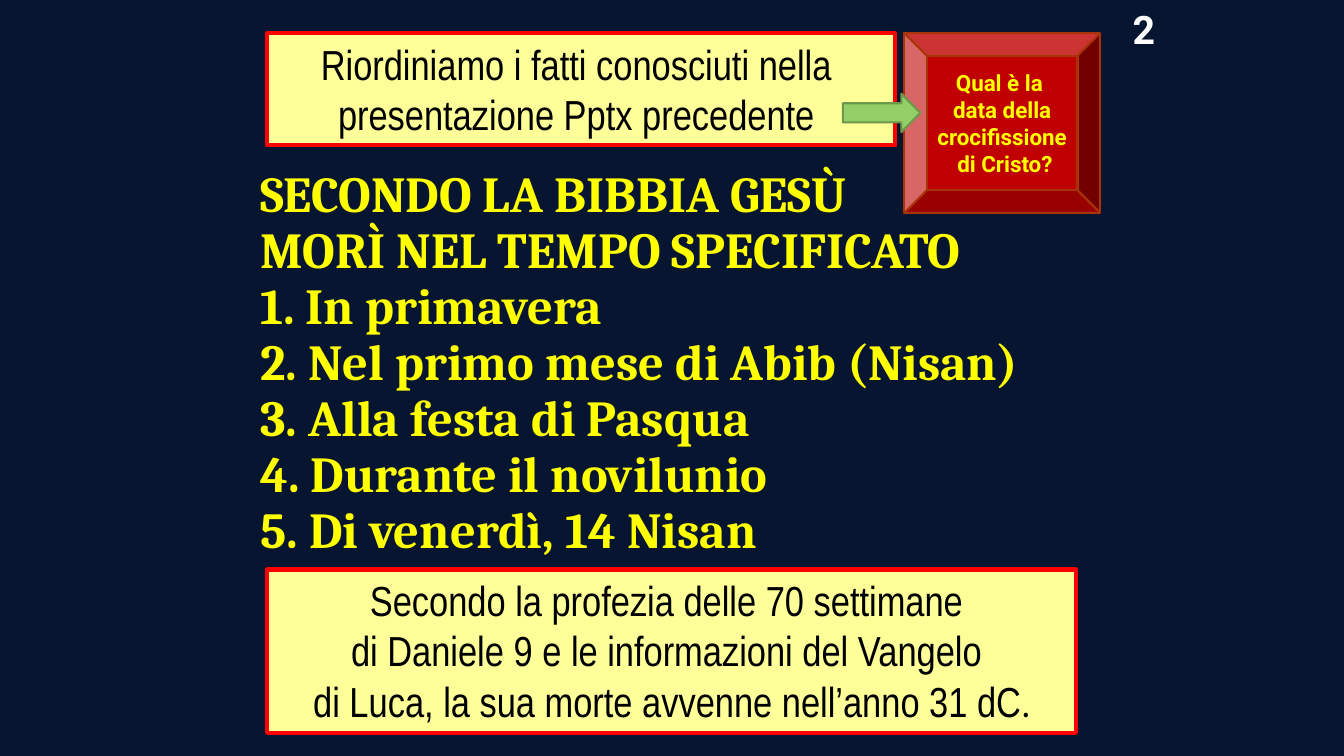
"""Build the slide that reviews the known facts about the date of the crucifixion."""
from dataclasses import dataclass

from lxml.etree import SubElement
from pptx import Presentation
from pptx.dml.color import RGBColor
from pptx.enum.shapes import MSO_SHAPE
from pptx.enum.text import MSO_ANCHOR, MSO_AUTO_SIZE, PP_ALIGN
from pptx.oxml.ns import qn
from pptx.util import Inches, Pt


@dataclass(frozen=True)
class Theme:
    night: str = "071531"
    white: str = "FFFFFF"
    black: str = "000000"
    yellow: str = "FFFF00"
    cream: str = "FFFF99"
    red: str = "FF0000"
    crimson: str = "C00000"
    rust: str = "A73406"
    green: str = "94CE67"
    moss: str = "6D984C"
    narrow: str = "Arial Narrow"
    serif: str = "Cambria"
    sans: str = "Roboto"
    question: int = 16
    number: int = 28
    panel: int = 30
    facts: int = 36
    facts_pitch: int = 40


THEME = Theme()


def write(box, lines, *, font, size, color, bold=False, align=PP_ALIGN.CENTER,
          anchor=MSO_ANCHOR.TOP, fit=MSO_AUTO_SIZE.SHAPE_TO_FIT_TEXT, wrap=True, pitch=None):
    frame = box.text_frame
    frame.text = "\n".join(lines)
    frame.word_wrap = wrap
    frame.auto_size = fit
    frame.vertical_anchor = anchor
    for para in frame.paragraphs:
        para.alignment = align
        para.space_before = Pt(0)
        if pitch:
            para.line_spacing = Pt(pitch)
        for span in para.runs:
            span.font.name = font
            span.font.size = Pt(size)
            span.font.bold = bold
            span.font.color.rgb = RGBColor.from_string(color)


def paint(box, fill, line, width):
    box.fill.solid()
    box.fill.fore_color.rgb = RGBColor.from_string(fill)
    box.line.color.rgb = RGBColor.from_string(line)
    box.line.width = Pt(width)


deck = Presentation()
deck.slide_width, deck.slide_height = Inches(13.33), Inches(7.5)
page = deck.slides.add_slide(deck.slide_layouts[1])
page.background.fill.solid()
page.background.fill.fore_color.rgb = RGBColor.from_string(THEME.night)

number = page.shapes.add_textbox(Inches(11.12), Inches(0), Inches(0.45), Inches(0.57))
write(number, ["2"], font=THEME.sans, size=THEME.number, color=THEME.white, bold=True, wrap=False)

facts = page.placeholders[1]
facts.left, facts.top, facts.width, facts.height = map(Inches, (2.48, 1.6, 8.64, 4.03))
write(facts, [
    "SECONDO LA BIBBIA GESÙ",
    "MORÌ NEL TEMPO SPECIFICATO",
    "1. In primavera",
    "2. Nel primo mese di Abib (Nisan)",
    "3. Alla festa di Pasqua",
    "4. Durante il novilunio",
    "5. Di venerdì, 14 Nisan",
], font=THEME.serif, size=THEME.facts, color=THEME.yellow, bold=True,
    align=PP_ALIGN.LEFT, pitch=THEME.facts_pitch)
for para in facts.text_frame.paragraphs:
    properties = para._p.get_or_add_pPr()
    properties.set("marL", "0")
    properties.set("indent", "0")
    SubElement(properties, qn("a:buNone"))

title = page.shapes.title
title.left, title.top, title.width, title.height = map(Inches, (2.65, 0.33, 6.23, 1.11))
conclusion = page.shapes.add_shape(
    MSO_SHAPE.RECTANGLE, Inches(2.65), Inches(5.65), Inches(8.02), Inches(1.62))
conclusion.shadow.inherit = False
panels = [
    (title, ["Riordiniamo i fatti conosciuti nella ", "presentazione Pptx precedente "]),
    (conclusion, ["Secondo la profezia delle 70 settimane ",
                  "di Daniele 9 e le informazioni del Vangelo ",
                  "di Luca, la sua morte avvenne nell’anno 31 dC"]),
]
for panel, lines in panels:
    paint(panel, THEME.cream, THEME.red, 3)
    write(panel, lines, font=THEME.narrow, size=THEME.panel, color=THEME.black)

full_stop = conclusion.text_frame.paragraphs[-1].add_run()
full_stop.text = "."
full_stop.font.name = THEME.serif
full_stop.font.size = Pt(THEME.number)
full_stop.font.color.rgb = RGBColor.from_string(THEME.black)

question = page.shapes.add_shape(
    MSO_SHAPE.BEVEL, Inches(8.97), Inches(0.33), Inches(1.94), Inches(1.78))
question.shadow.inherit = False
paint(question, THEME.crimson, THEME.rust, 1.5)
write(question, ["Qual è la ", "data della crocifissione", " di Cristo?"],
      font=THEME.sans, size=THEME.question, color=THEME.yellow, bold=True,
      anchor=MSO_ANCHOR.MIDDLE, fit=MSO_AUTO_SIZE.NONE)

arrow = page.shapes.add_shape(
    MSO_SHAPE.RIGHT_ARROW, Inches(8.36), Inches(0.93), Inches(0.77), Inches(0.38))
arrow.shadow.inherit = False
paint(arrow, THEME.green, THEME.moss, 1.5)

deck.save("out.pptx")
